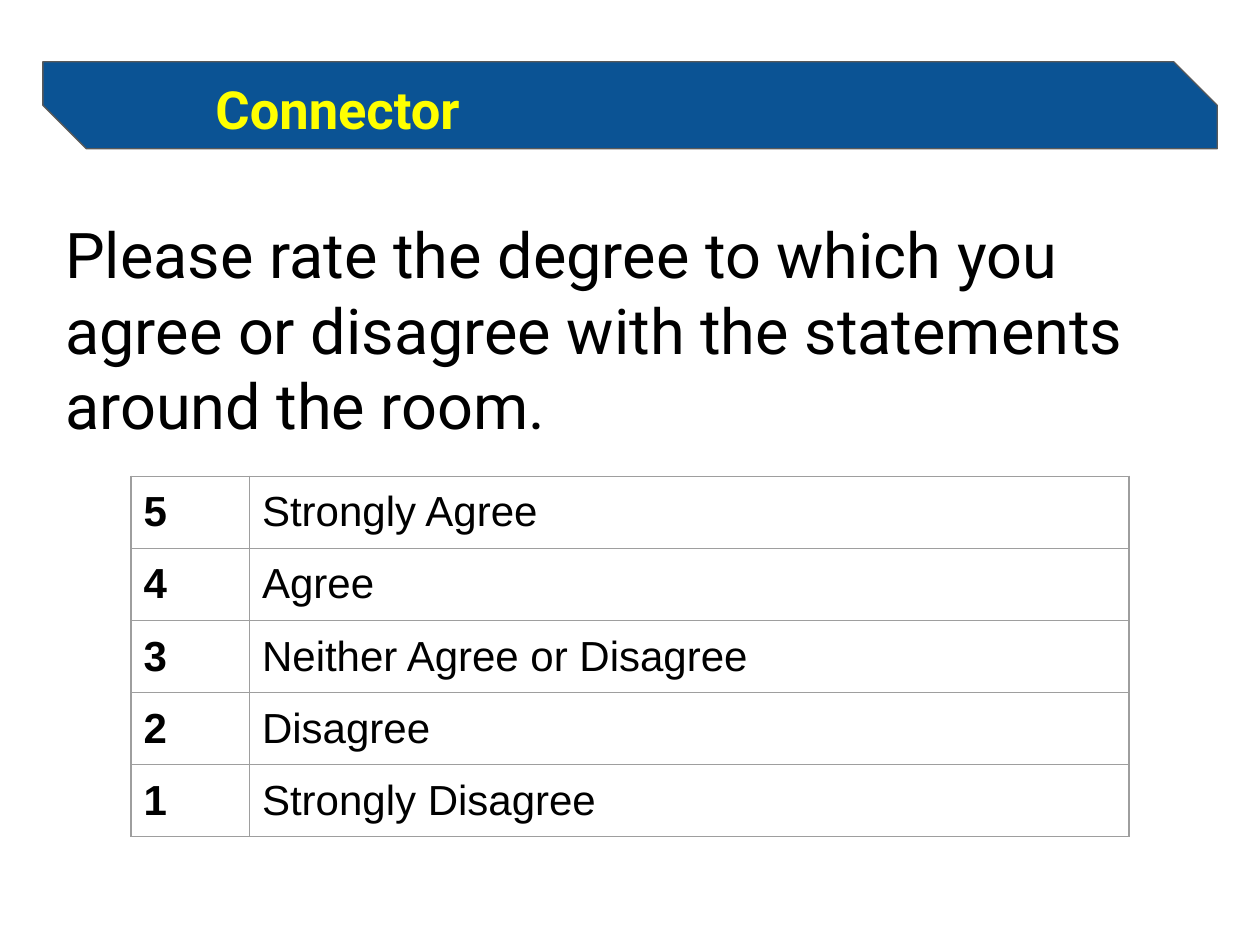
"""Build the Connector slide with its five-point agreement scale."""
import pptx
import pptx.dml.color
import pptx.enum.shapes
import pptx.enum.text
import pptx.oxml
import pptx.oxml.ns
import pptx.util

Inches = pptx.util.Inches
Pt = pptx.util.Pt
RGBColor = pptx.dml.color.RGBColor
ANCHOR = pptx.enum.text.MSO_ANCHOR

BLUE = RGBColor(0x0B, 0x53, 0x94)
YELLOW = RGBColor(0xFF, 0xFF, 0x00)
BLACK = RGBColor(0x00, 0x00, 0x00)
DARK_GREY = RGBColor(0x59, 0x59, 0x59)
BORDER_GREY = RGBColor(0x9E, 0x9E, 0x9E)

MARGINS = {f"margin_{side}": Inches(0.1) for side in ("left", "top", "right", "bottom")}
FRAME = {"word_wrap": True, "auto_size": pptx.enum.text.MSO_AUTO_SIZE.NONE, **MARGINS}
TITLE = {"name": "Roboto", "size": Pt(30), "bold": True}
BODY = {"name": "Roboto", "size": Pt(36), "bold": False}
CELL = {"name": "Arial", "size": Pt(24)}
SCALE = [
    ("5", "Strongly Agree"),
    ("4", "Agree"),
    ("3", "Neither Agree or Disagree"),
    ("2", "Disagree"),
    ("1", "Strongly Disagree"),
]


def set_attrs(obj, values):
    for name, value in values.items():
        setattr(obj, name, value)


def write(tf, text, font, color):
    p = tf.paragraphs[0]
    p.alignment = pptx.enum.text.PP_ALIGN.LEFT
    r = p.add_run()
    r.text = text
    set_attrs(r.font, font)
    r.font.color.rgb = color


prs = pptx.Presentation()
prs.slide_width, prs.slide_height = Inches(10), Inches(7.5)
s = prs.slides.add_slide(prs.slide_layouts[5])

banner = s.shapes.add_shape(
    pptx.enum.shapes.MSO_SHAPE.SNIP_2_DIAG_RECTANGLE,
    Inches(0.34), Inches(0.49), Inches(9.32), Inches(0.69),
)
banner.adjustments[0], banner.adjustments[1] = 0, 0.5
banner.shadow.inherit = False
banner.fill.solid()
banner.fill.fore_color.rgb = BLUE
banner.line.color.rgb = DARK_GREY
banner.line.width = Pt(0.75)

title = s.shapes.title
title._element.addprevious(banner._element)
set_attrs(title, {"left": Inches(1.61), "top": Inches(0.51),
                  "width": Inches(7.73), "height": Inches(0.65)})
set_attrs(title.text_frame, {**FRAME, "vertical_anchor": ANCHOR.TOP})
write(title.text_frame, "Connector", TITLE, YELLOW)

body = s.shapes.add_textbox(Inches(0.42), Inches(1.57), Inches(9.17), Inches(2.08))
set_attrs(body.text_frame, {**FRAME, "vertical_anchor": ANCHOR.MIDDLE})
write(
    body.text_frame,
    "Please rate the degree to which you agree or disagree with the statements around the room.",
    BODY, BLACK,
)

row_height = Inches(0.42)
table = s.shapes.add_table(
    len(SCALE), 2, Inches(1.04), Inches(3.78), Inches(7.92), row_height * len(SCALE)
).table
set_attrs(table, {"first_row": False, "horz_banding": False})
table.columns[0].width = Inches(0.94)
table.columns[1].width = Inches(6.98)

for i, row in enumerate(SCALE):
    table.rows[i].height = row_height
    for j, text in enumerate(row):
        cell = table.cell(i, j)
        set_attrs(cell, {**MARGINS, "vertical_anchor": ANCHOR.TOP})
        write(cell.text_frame, text, {**CELL, "bold": j == 0}, BLACK)
        tcPr = cell._tc.get_or_add_tcPr()
        for edge in ("lnL", "lnR", "lnT", "lnB"):
            tcPr.append(pptx.oxml.parse_xml(
                f'<a:{edge} {pptx.oxml.ns.nsdecls("a")} w="{Pt(0.75)}">'
                f'<a:solidFill><a:srgbClr val="{BORDER_GREY}"/></a:solidFill></a:{edge}>'
            ))
        cell.fill.background()

prs.save("out.pptx")
